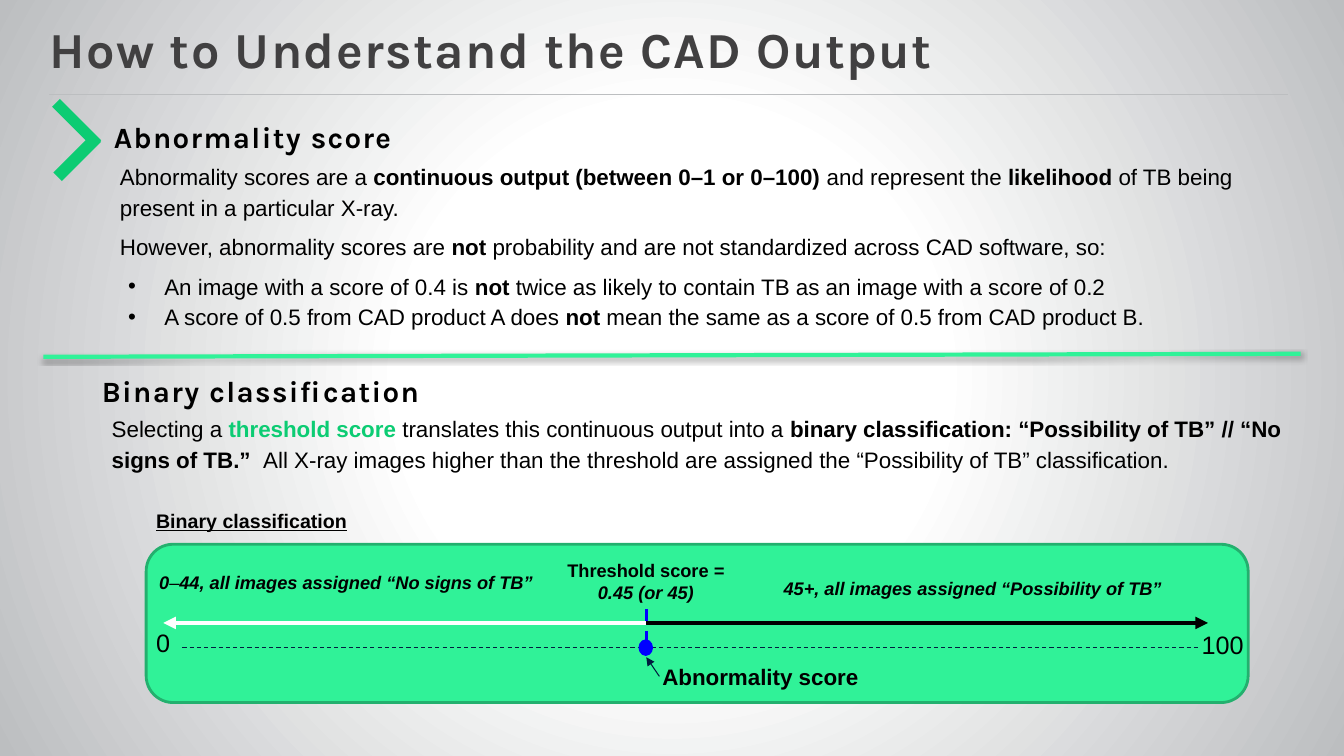
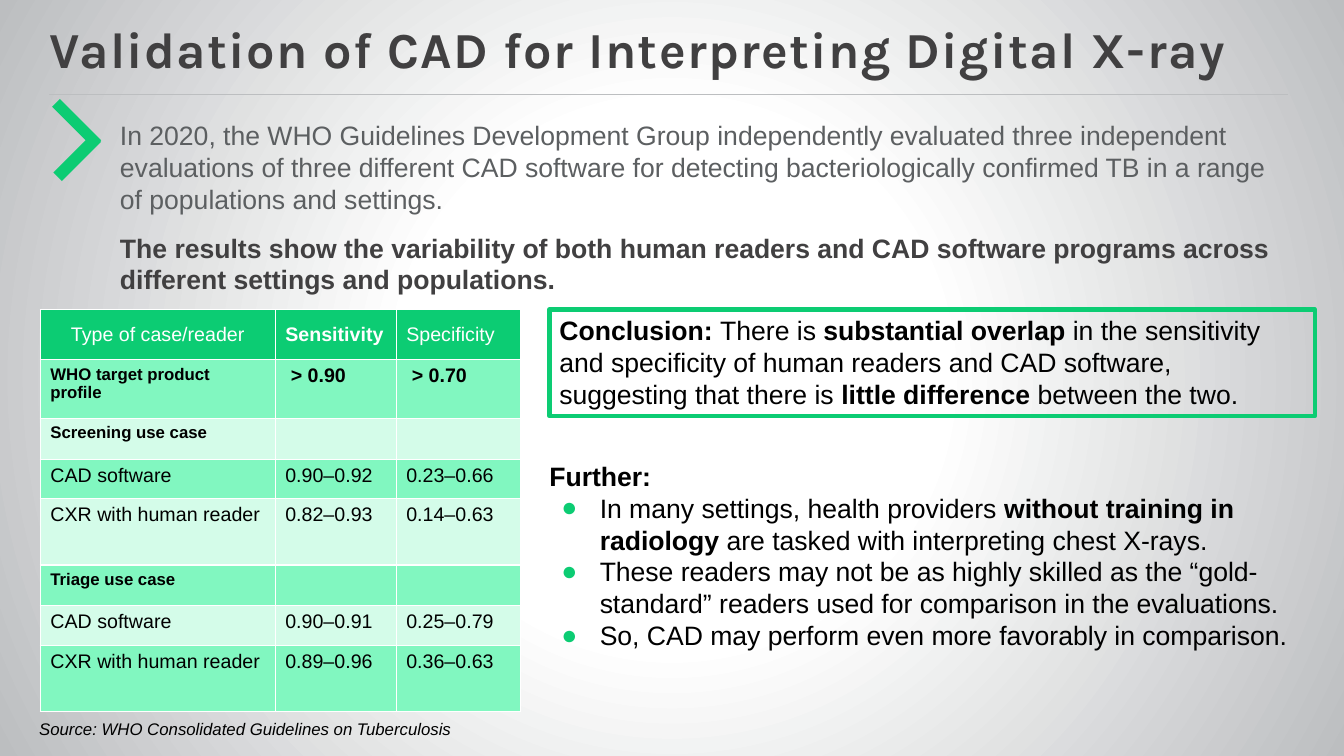
from dataclasses import dataclass, replace
from typing import Optional

from lxml.etree import SubElement as Sub
from pptx import Presentation
from pptx.dml.color import RGBColor
from pptx.enum.dml import MSO_LINE as Dash
from pptx.enum.shapes import MSO_CONNECTOR as Conn, MSO_SHAPE as Form
from pptx.enum.text import MSO_ANCHOR as Anchor, MSO_AUTO_SIZE as Auto, PP_ALIGN as Align
from pptx.oxml import parse_xml
from pptx.oxml.ns import nsdecls, qn
from pptx.util import Inches, Pt

GREEN, MINT, EDGE = "0CCC73", "30F298", "23B06E"
BAND, PALE = "81F7C0", "D4FCE9"
DARK, GRAY, SILVER = "414041", "5C5F61", "BCBEC0"
BLACK, WHITE, BLUE, NAVY, INK = "000000", "FFFFFF", "0000FF", "031D40", "001B3F"
Box = tuple[float, float, float, float]
Point = tuple[float, float]
FLAT = (0, 0.05, 0, 0.05)
SNUG = (0.1, 0.05, 0.1, 0.05)
WIDE = (0.1, 0.1, 0.1, 0.1)


@dataclass(frozen=True)
class Style:
    size: float
    color: str = BLACK
    font: str = "Arial"
    italic: bool = False
    under: bool = False
    track: int = 0


@dataclass(frozen=True)
class Para:
    text: str
    style: Style
    left: float = 0
    hang: float = 0
    gap: float = 0
    lead: float = 1
    mark: str = ""
    tint: str = BLACK
    align: Align = Align.LEFT


@dataclass(frozen=True)
class Line:
    start: Point
    end: Point
    color: str
    width: float
    dash: bool = False
    arrow: bool = False
    shade: bool = False


@dataclass(frozen=True)
class Label:
    box: Box
    para: Para


TITLE = Style(36, DARK, "Karla", track=100)
HEAD = replace(TITLE, size=21, color=BLACK)
TEXT, LARGE = Style(16), Style(19)
NOTE = Style(13, italic=True)


def paint(color: str) -> RGBColor:
    return RGBColor.from_string(color)


def write(frame, paras: list[Para], pads: tuple = SNUG, anchor=Anchor.TOP) -> None:
    """Fill a frame; text between ** marks is bold."""
    frame.word_wrap = True
    frame.auto_size = Auto.NONE
    frame.vertical_anchor = anchor
    (frame.margin_left, frame.margin_top,
     frame.margin_right, frame.margin_bottom) = map(Inches, pads)
    for n, para in enumerate(paras):
        set_para(frame.add_paragraph() if n else frame.paragraphs[0], para)


def set_para(p, para: Para) -> None:
    props = p._p.get_or_add_pPr()
    props.set("marL", str(Inches(para.left)))
    props.set("indent", str(Inches(para.hang)))
    if para.mark:
        Sub(Sub(props, qn("a:buClr")), qn("a:srgbClr"), val=para.tint)
        Sub(props, qn("a:buFont"), typeface="Arial")
        Sub(props, qn("a:buChar"), char=para.mark)
    else:
        Sub(props, qn("a:buNone"))
    p.alignment = para.align
    p.line_spacing = para.lead
    p.space_before = Pt(para.gap)
    p.space_after = Pt(0)
    style = para.style
    for n, part in enumerate(para.text.split("**")):
        if not part:
            continue
        run = p.add_run()
        run.text = part
        font = run.font
        font.name, font.size = style.font, Pt(style.size)
        font.bold, font.italic = n % 2 == 1, style.italic
        font.underline = style.under
        font.color.rgb = paint(style.color)
        if style.track:
            run._r.get_or_add_rPr().set("spc", str(style.track))


def add_text(slide, box: Box, paras: list[Para], pads: tuple = SNUG, anchor=Anchor.TOP):
    frame = slide.shapes.add_textbox(*map(Inches, box)).text_frame
    write(frame, paras, pads, anchor)
    return frame


def add_form(slide, form: Form, box: Box, fill: Optional[str] = None,
             edge: Optional[str] = None, width: float = 1):
    shape = slide.shapes.add_shape(form, *map(Inches, box))
    shape.shadow.inherit = False
    if fill:
        shape.fill.solid()
        shape.fill.fore_color.rgb = paint(fill)
    else:
        shape.fill.background()
    if edge:
        shape.line.color.rgb = paint(edge)
        shape.line.width = Pt(width)
    else:
        shape.line.fill.background()
    return shape


def add_line(slide, line: Line) -> None:
    ends = map(Inches, line.start + line.end)
    conn = slide.shapes.add_connector(Conn.STRAIGHT, *ends)
    conn.line.color.rgb = paint(line.color)
    conn.line.width = Pt(line.width)
    if line.dash:
        conn.line.dash_style = Dash.DASH
    props = conn._element.spPr
    if line.arrow:
        Sub(props.find(qn("a:ln")), qn("a:tailEnd"), type="triangle")
    fx = Sub(props, qn("a:effectLst"))
    if line.shade:
        cast = Sub(fx, qn("a:outerShdw"), blurRad=str(Pt(3.1)), dist=str(Pt(1.8)),
                   dir="5400000", rotWithShape="0")
        tone = Sub(cast, qn("a:srgbClr"), val=BLACK)
        Sub(tone, qn("a:alpha"), val="34000")


def set_back(master) -> None:
    """Give every slide the round white-to-silver glow."""
    stops = "".join(f'<a:gs pos="{pos}000"><a:srgbClr val="{color}"/></a:gs>'
                    for pos, color in ((0, WHITE), (35, WHITE), (100, SILVER)))
    back = master.element.find(".//" + qn("p:bg"))
    for child in list(back):
        back.remove(child)
    back.append(parse_xml(
        f'<p:bgPr {nsdecls("p", "a")}><a:gradFill rotWithShape="1">'
        f'<a:gsLst>{stops}</a:gsLst><a:path path="circle">'
        '<a:fillToRect l="50000" t="50000" r="50000" b="50000"/></a:path>'
        '</a:gradFill><a:effectLst/></p:bgPr>'))


def place(shape, box: Box) -> None:
    shape.left, shape.top, shape.width, shape.height = map(Inches, box)


def add_slide(deck, title: str, box: Box, paras: list[Para]):
    """Add a slide with title, rule, chevron and body text."""
    slide = deck.slides.add_slide(deck.slide_layouts[1])
    head, body = slide.placeholders
    place(head, (0.49, 0.1, 11.88, 0.83))
    write(head.text_frame, [Para(f"**{title}**", TITLE, lead=0.9)], FLAT, Anchor.MIDDLE)
    place(body, box)
    write(body.text_frame, paras, FLAT)
    add_line(slide, Line((0.49, 0.94), (12.77, 0.94), SILVER, 0.75))
    for arm, turn in (((0.49, 1.5, 0.55, 0.12), 135), ((0.47, 1.17, 0.58, 0.11), 225)):
        add_form(slide, Form.RECTANGLE, arm, GREEN).rotation = turn
    return slide


def add_scale(slide) -> None:
    """Draw the 0 to 100 score scale with its threshold."""
    panel = add_form(slide, Form.ROUNDED_RECTANGLE, (1.45, 5.4, 10.93, 1.57), MINT, EDGE, 2)
    panel.adjustments[0] = 0.17
    mid = 6.41
    add_line(slide, Line((1.81, 6.42), (11.88, 6.42), NAVY, 0.75, dash=True))
    add_form(slide, Form.OVAL, (6.34, 6.35, 0.13, 0.15), BLUE, BLUE)
    for line in (
        Line((mid, 6.18), (11.98, 6.18), BLACK, 3, arrow=True),
        Line((mid, 6.18), (1.62, 6.18), WHITE, 3, arrow=True),
        Line((mid, 6.04), (mid, 6.35), BLUE, 2.25, dash=True),
        Line((6.54, 6.71), (mid, 6.52), INK, 0.75, arrow=True),
    ):
        add_line(slide, line)
    low = "**0**–**44, all images assigned “No signs of TB”**"
    high = "**45+, all images assigned “Possibility of TB” **"
    for label in (
        Label((1.45, 6.17, 0.42, 0.4), Para("0", Style(18))),
        Label((11.82, 6.19, 0.96, 0.4), Para("100", Style(18))),
        Label((6.47, 6.53, 2.58, 0.37), Para("**Abnormality score**", TEXT)),
        Label((1.01, 5.62, 4.84, 0.32), Para(low, NOTE, align=Align.CENTER)),
        Label((7.15, 5.68, 5.04, 0.32), Para(high, NOTE, align=Align.CENTER)),
        Label((1.45, 5, 10.74, 0.4),
              Para("**Binary classification**", Style(14, under=True))),
    ):
        add_text(slide, label.box, [label.para])
    cut = Para("**Threshold score**** = 0.45 (or 45)**", Style(13), align=Align.CENTER)
    frame = add_text(slide, (5.41, 5.5, 1.99, 0.54), [cut])
    frame.paragraphs[0].runs[1].font.italic = True


def add_output(deck) -> None:
    base = Para("", TEXT, left=0.06, lead=1.15)
    item = replace(base, left=0.5, hang=-0.36, mark="•")
    slide = add_slide(deck, "How to Understand the CAD Output", (1.13, 1.53, 11.58, 1.88), [
        replace(base, text="Abnormality scores are a **continuous output (between 0–1 or 0–100) "
                "**and represent the **likelihood **of TB being present in a particular X-ray."),
        replace(base, gap=6, text="However, abnormality scores are **not** probability and "
                "are not standardized across CAD software, so:"),
        replace(item, gap=6, text="An image with a score of 0.4 is **not** twice as likely "
                "to contain TB as an image with a score of 0.2"),
        replace(item, text="A score of 0.5 from CAD product A does **not** mean the same "
                "as a score of 0.5 from CAD product B."),
    ])
    for text, box in (("Abnormality score", (1.13, 0.94, 11.77, 0.88)),
                      ("Binary classification", (1.01, 3.67, 11.77, 0.45))):
        add_text(slide, box, [Para(f"**{text}**", HEAD, lead=0.9)], FLAT, Anchor.MIDDLE)
    frame = add_text(slide, (1.01, 3.98, 11.98, 0.82), [Para(
        "Selecting a **threshold score **translates this continuous output into a "
        "**binary classification: “Possibility of TB” // “No signs of TB.”  **All X-ray images "
        "higher than the threshold are assigned the “Possibility of TB” classification.",
        TEXT, lead=1.15)], WIDE)
    frame.paragraphs[0].runs[1].font.color.rgb = paint(GREEN)
    add_line(slide, Line((0.43, 3.54), (12.9, 3.51), MINT, 3, shade=True))
    add_scale(slide)


ROWS = (
    ("Type of case/reader", "**Sensitivity**", "Specificity"),
    ("**WHO target product profile**", "** > 0.90**", "** > 0.70**"),
    ("**Screening use case**", "", ""),
    ("CAD software", "0.90–0.92", "0.23–0.66"),
    ("CXR with human reader", "0.82–0.93", "0.14–0.63"),
    ("**Triage use case**", "", ""),
    ("CAD software", "0.90–0.91", "0.25–0.79"),
    ("CXR with human reader", "0.89–0.96", "0.36–0.63"),
)
COLS = (2.33, 1.2, 1.23)
HIGHS = (0.5, 0.58, 0.39, 0.39, 0.66, 0.39, 0.39, 0.66)


def add_cases(slide) -> None:
    box = (0.4, 3.07, sum(COLS), sum(HIGHS))
    table = slide.shapes.add_table(len(ROWS), len(COLS), *map(Inches, box)).table
    for col, width in zip(table.columns, COLS):
        col.width = Inches(width)
    for r, (row, high) in enumerate(zip(ROWS, HIGHS)):
        table.rows[r].height = Inches(high)
        for c, text in enumerate(row):
            cell = table.cell(r, c)
            cell.fill.solid()
            cell.fill.fore_color.rgb = paint((BAND if r % 2 else PALE) if r else GREEN)
            cell.vertical_anchor = Anchor.TOP if r else Anchor.MIDDLE
            size = 12 if c == 0 and text.startswith("**") else 14
            style = Style(size, BLACK if r else WHITE)
            side = Align.LEFT if r or c else Align.CENTER
            set_para(cell.text_frame.paragraphs[0], Para(text, style, align=side))


def add_proof(deck) -> None:
    slide = add_slide(
        deck, "Validation of CAD for Interpreting Digital X-ray", (1.19, 1.13, 11.58, 5.75), [
            Para("In 2020, the WHO Guidelines Development Group independently evaluated three "
                 "independent evaluations of three different CAD software for detecting "
                 "bacteriologically confirmed TB in a range of populations and settings.",
                 replace(LARGE, color=GRAY)),
            Para("**The results show the variability of both human readers and CAD software "
                 "programs across different settings and populations.**",
                 replace(LARGE, color=DARK), gap=12),
        ])
    add_cases(slide)
    add_text(slide, (0.29, 7.08, 4.64, 0.3), [Para(
        "Source: WHO Consolidated Guidelines on Tuberculosis", Style(12, italic=True))])
    frame = add_form(slide, Form.RECTANGLE, (5.45, 3.07, 7.59, 1.06), None, GREEN, 3).text_frame
    write(frame, [Para(
        "**Conclusion: **There is **substantial overlap** in the sensitivity and specificity "
        "of human readers and CAD software, suggesting that there is **little difference "
        "**between the two.", LARGE)])
    item = Para("", LARGE, left=0.5, hang=-0.38, mark="●", tint=GREEN)
    points = (
        "In many settings, health providers **without training in radiology **are tasked "
        "with interpreting chest X-rays.",
        "These readers may not be as highly skilled as the “gold-standard” readers used "
        "for comparison in the evaluations.",
        "So, CAD may perform even more favorably in comparison.",
    )
    add_text(slide, (5.35, 4.46, 7.59, 2.12), [
        Para("**Further:**", LARGE), *(replace(item, text=point) for point in points)], WIDE)


def main() -> None:
    deck = Presentation()
    deck.slide_width, deck.slide_height = Inches(13.33), Inches(7.5)
    set_back(deck.slide_master)
    add_output(deck)
    add_proof(deck)
    deck.save("out.pptx")


if __name__ == "__main__":
    main()
